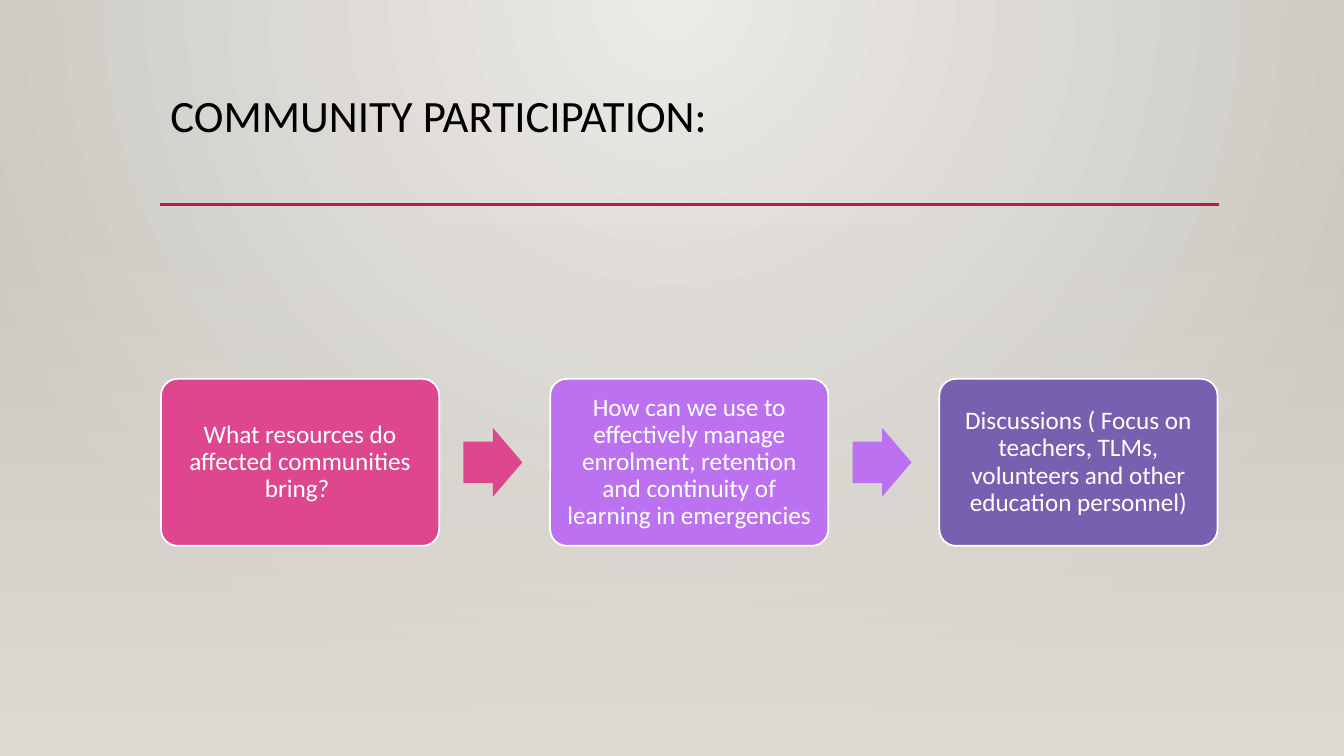
from lxml import etree
from pptx import Presentation
from pptx import util as u
from pptx.dml.color import RGBColor
from pptx.enum import shapes, text
from pptx.oxml.ns import qn

Pt = u.Pt
FONT = "Calibri"
COLORS = {
    "glow": "ECEAE7", "edge": "CAC7C1", "floor": "DFDBD5", "rule": "B71E42",
    "black": "000000", "white": "FFFFFF",
    "pink": "DE478E", "violet": "BC72F0", "purple": "795FAF",
}
STEPS = [
    ("What resources do affected communities bring? ", "pink"),
    ("How can we use to effectively manage enrolment, retention and "
     "continuity of learning in emergencies", "violet"),
    ("Discussions ( Focus on teachers, TLMs, volunteers and other "
     "education personnel)", "purple"),
]


def rgb(name):
    return RGBColor.from_string(COLORS[name])


def add_gradient(fill, parent, names):
    """Two-stop gradient; returns its XML element for further settings."""
    fill.gradient()
    for stop, name, position in zip(fill.gradient_stops, names, (0, 1)):
        stop.color.rgb = rgb(name)
        stop.position = position
    return next(parent.iter(qn("a:gradFill")))


def add_text(tf, words, size, color, align):
    p = tf.paragraphs[0]
    p.alignment = align
    p.line_spacing = 0.9
    r = p.add_run()
    r.text = words
    r.font.name, r.font.size = FONT, Pt(size)
    r.font.color.rgb = rgb(color)


def add_backdrop(s, width, height):
    # Glow spreading from the top centre
    grad = add_gradient(s.background.fill, s.element, ("glow", "edge"))
    grad.remove(grad.find(qn("a:lin")))
    path = etree.SubElement(grad, qn("a:path"), {"path": "circle"})
    etree.SubElement(path, qn("a:fillToRect"),
                     {"l": "43000", "t": "0", "r": "43000", "b": "100000"})
    # Floor fading in towards the bottom
    top = 159
    sp = s.shapes.add_shape(shapes.MSO_SHAPE.RECTANGLE, 0, Pt(top),
                            Pt(width), Pt(height - top))
    sp.shadow.inherit = False
    sp.line.fill.background()
    grad = add_gradient(sp.fill, sp.element, ("floor", "floor"))
    grad.find(qn("a:lin")).set("ang", "5400000")
    first = next(grad.iter(qn("a:srgbClr")))
    etree.SubElement(first, qn("a:alpha"), {"val": "0"})


def add_title(s, words, x, y, w, h):
    title = s.shapes.title
    title.left, title.top, title.width, title.height = map(Pt, (x, y, w, h))
    tf = title.text_frame
    tf.word_wrap = True
    tf.auto_size = text.MSO_AUTO_SIZE.NONE
    tf.vertical_anchor = text.MSO_ANCHOR.TOP
    add_text(tf, words, 32, "black", text.PP_ALIGN.LEFT)
    # Rule under the title
    rule = s.shapes.add_connector(shapes.MSO_CONNECTOR.STRAIGHT, Pt(x),
                                  Pt(y + h), Pt(x + w), Pt(y + h))
    rule.line.color.rgb = rgb("rule")
    rule.line.width = Pt(2.5)
    etree.SubElement(rule.element.spPr, qn("a:effectLst"))


def add_flow_shape(s, kind, x, y, w, h, color, adjustments):
    sp = s.shapes.add_shape(kind, Pt(x), Pt(y), Pt(w), Pt(h))
    sp.shadow.inherit = False
    sp.fill.solid()
    sp.fill.fore_color.rgb = rgb(color)
    sp.line.fill.background()
    for i, value in enumerate(adjustments):
        sp.adjustments[i] = value
    return sp


def add_process(s, steps, x, y, w, h):
    box_w, arrow_w, arrow_h, arrow_gap = 198.7, 42.1, 49.3, 17.3
    pitch = (w - box_w) / (len(steps) - 1)
    for i, (words, color) in enumerate(steps):
        left = x + i * pitch
        # Step box
        sp = add_flow_shape(s, shapes.MSO_SHAPE.ROUNDED_RECTANGLE,
                            left, y, box_w, h, color, [0.1])
        sp.line.color.rgb = rgb("white")
        sp.line.width = Pt(1.25)
        tf = sp.text_frame
        tf.word_wrap = True
        tf.vertical_anchor = text.MSO_ANCHOR.MIDDLE
        tf.margin_left = tf.margin_right = Pt(5.4)
        tf.margin_top = tf.margin_bottom = Pt(5.4)
        add_text(tf, words, 18, "white", text.PP_ALIGN.CENTER)
        # Arrow to the next step
        if i < len(steps) - 1:
            add_flow_shape(s, shapes.MSO_SHAPE.RIGHT_ARROW,
                           left + box_w + arrow_gap, y + (h - arrow_h) / 2,
                           arrow_w, arrow_h, color, [0.6, 0.5])


def main():
    width, height = 960, 540
    prs = Presentation()
    prs.slide_width, prs.slide_height = Pt(width), Pt(height)
    s = prs.slides.add_slide(prs.slide_layouts[5])
    add_backdrop(s, width, height)
    add_title(s, "COMMUNITY PARTICIPATION:", 114.5, 63.2, 756, 82.8)
    add_process(s, STEPS, 115, 270.6, 754.7, 119.3)
    prs.save("out.pptx")


if __name__ == "__main__":
    main()
